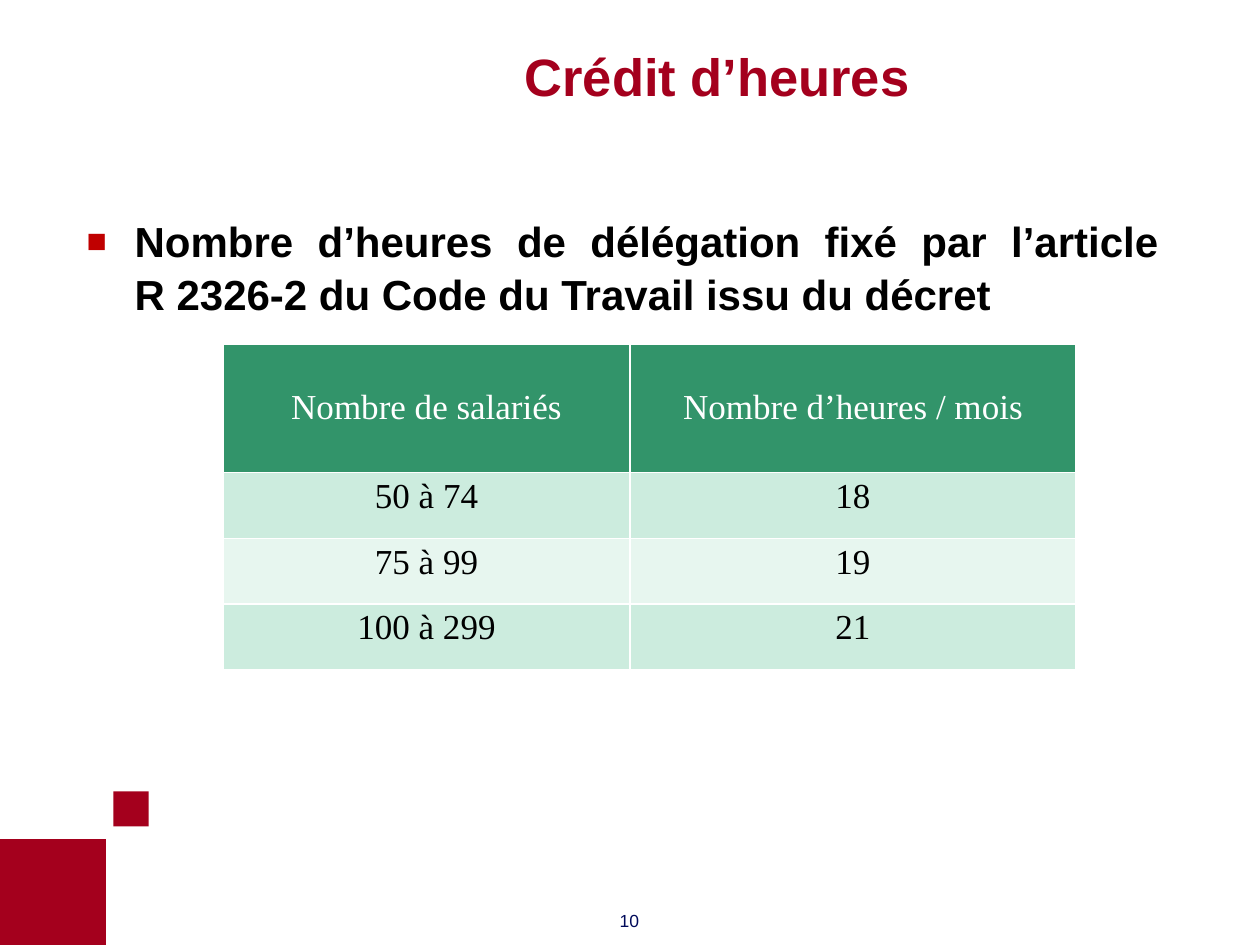
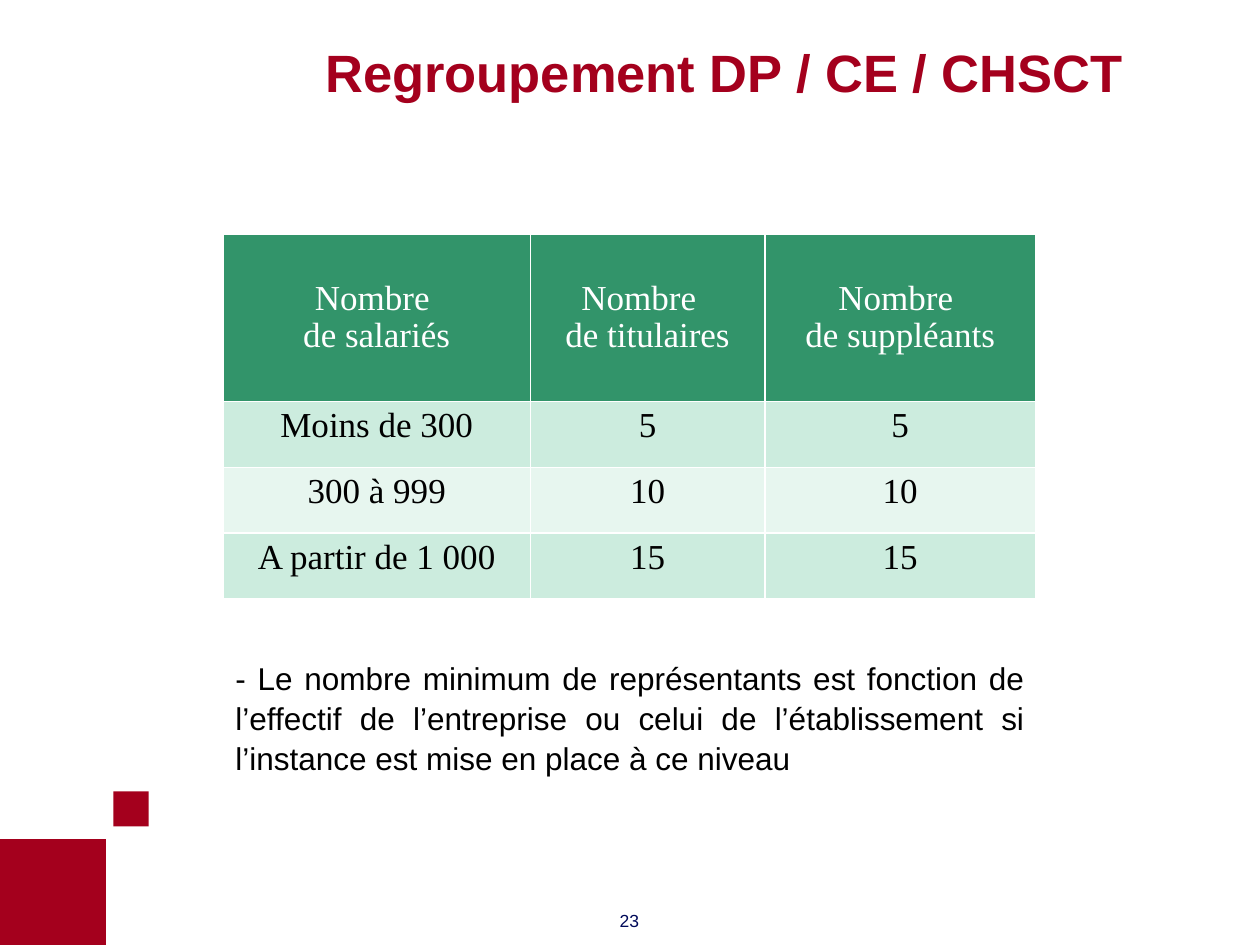
from lxml import etree
from pptx import Presentation
from pptx import util as u
from pptx.dml.color import RGBColor
from pptx.enum import shapes, text
from pptx.oxml.ns import qn

RED, GREEN, NAVY, BLACK, WHITE = "A4001D", "32946A", "000A5A", "000000", "FFFFFF"
BANDS = ["CCECDE", "E7F6EF"]
CENTER, JUSTIFY = text.PP_ALIGN.CENTER, text.PP_ALIGN.JUSTIFY
TOP, MIDDLE = text.MSO_ANCHOR.TOP, text.MSO_ANCHOR.MIDDLE

prs = Presentation()
prs.slide_width, prs.slide_height = u.Inches(10), u.Inches(7.5)

# Grid: 100 columns by 100 rows; places are left, top, width, height
COL, ROW = prs.slide_width / 100, prs.slide_height / 100
GRID = (COL, ROW, COL, ROW)
SQUARES = [(0, 88.8, 8.4, 11.2), (9, 83.73, 2.8, 3.73)]
ROW_H = 6.97


def rgb(hex_color):
    return RGBColor.from_string(hex_color)


def write(tf, words, size, font, color, bold, align, spacing):
    tf.text = words
    for p in tf.paragraphs:
        p.alignment, p.line_spacing = align, spacing
        for r in p.runs:
            r.font.size, r.font.name, r.font.bold = u.Pt(size), font, bold
            r.font.color.rgb = rgb(color)


slides = [
    {
        "number": "10",
        "title": ("Crédit d’heures ", (20.1, 2.8, 74.8, 10.5)),
        "body": ("Nombre d’heures de délégation fixé par l’article \v"
                 "R 2326-2 du Code du Travail issu du décret",
                 (5.9, 21.87, 89, 66.93), 24, True),
        "table_at": (17.7, 36.4),
        "cols": [32.3, 35.4],
        "header_h": 13.6,
        "rows": [["Nombre de salariés", "Nombre d’heures / mois"],
                 ["50 à 74", "18"], ["75 à 99", "19"], ["100 à 299", "21"]],
    },
    {
        "number": "23",
        "title": ("Regroupement DP / CE / CHSCT", (20.1, 1.73, 74.8, 11.6)),
        "body": ("- Le nombre minimum de représentants est fonction de l’effectif "
                 "de l’entreprise ou celui de l’établissement si l’instance est "
                 "mise en place à ce niveau",
                 (17.7, 68.93, 64.6, 13.47), 18, False),
        "table_at": (17.7, 24.8),
        "cols": [24.4, 18.6, 21.5],
        "header_h": 17.7,
        "rows": [["Nombre \nde salariés", "Nombre  \nde titulaires", "Nombre \nde suppléants"],
                 ["Moins de 300", "5", "5"], ["300 à 999", "10", "10"],
                 ["A partir de 1 000", "15", "15"]],
    },
]

for content in slides:
    s = prs.slides.add_slide(prs.slide_layouts[6])

    # Corner squares
    for place in SQUARES:
        sp = s.shapes.add_shape(shapes.MSO_SHAPE.RECTANGLE,
                                *[int(n * unit) for n, unit in zip(place, GRID)])
        sp.shadow.inherit = False
        sp.fill.solid()
        sp.fill.fore_color.rgb = rgb(RED)
        sp.line.fill.background()

    # Slide number, title and body text
    body, body_at, body_size, bulleted = content["body"]
    title, title_at = content["title"]
    for words, place, size, color, bold, align, anchor, spacing in [
        (content["number"], (46.5, 95.6, 6.9, 4.4), 10, NAVY, False, CENTER, TOP, 1),
        (title, title_at, 30, RED, True, CENTER, MIDDLE, 1),
        (body, body_at, body_size, BLACK, bulleted, JUSTIFY, TOP, 1.05),
    ]:
        sp = s.shapes.add_textbox(*[int(n * unit) for n, unit in zip(place, GRID)])
        tf = sp.text_frame
        tf.word_wrap, tf.vertical_anchor = True, anchor
        write(tf, words, size, "Arial", color, bold, align, spacing)

    # Square bullet on the body, the last text placed
    if bulleted:
        pPr = tf.paragraphs[0]._p.get_or_add_pPr()
        pPr.set("marL", str(u.Inches(0.38)))
        pPr.set("indent", str(-u.Inches(0.38)))
        bullet_color = etree.SubElement(pPr, qn("a:buClr"))
        etree.SubElement(bullet_color, qn("a:srgbClr"), val="C00000")
        etree.SubElement(pPr, qn("a:buSzPct"), val="80000")
        etree.SubElement(pPr, qn("a:buFont"), typeface="Arial")
        etree.SubElement(pPr, qn("a:buChar"), char="■")

    # Table with a green header and banded rows
    rows, cols = content["rows"], content["cols"]
    heights = [content["header_h"]] + [ROW_H] * (len(rows) - 1)
    place = (*content["table_at"], sum(cols), sum(heights))
    table = s.shapes.add_table(len(rows), len(cols),
                               *[int(n * unit) for n, unit in zip(place, GRID)]).table
    for column, width in zip(table.columns, cols):
        column.width = int(width * COL)
    for i, (row, height) in enumerate(zip(rows, heights)):
        table.rows[i].height = int(height * ROW)
        for j, words in enumerate(row):
            cell = table.cell(i, j)
            cell.vertical_anchor = TOP if i else MIDDLE
            write(cell.text_frame, words, 20, "Times New Roman",
                  BLACK if i else WHITE, False, CENTER, 0.95)
            tcPr = cell._tc.get_or_add_tcPr()
            for side in ("lnL", "lnR", "lnT", "lnB"):
                ln = etree.SubElement(tcPr, qn("a:" + side), w=str(u.Pt(1)))
                fill = etree.SubElement(ln, qn("a:solidFill"))
                etree.SubElement(fill, qn("a:srgbClr"), val=WHITE)
            cell.fill.solid()
            cell.fill.fore_color.rgb = rgb(BANDS[(i - 1) % 2] if i else GREEN)

prs.save("out.pptx")
